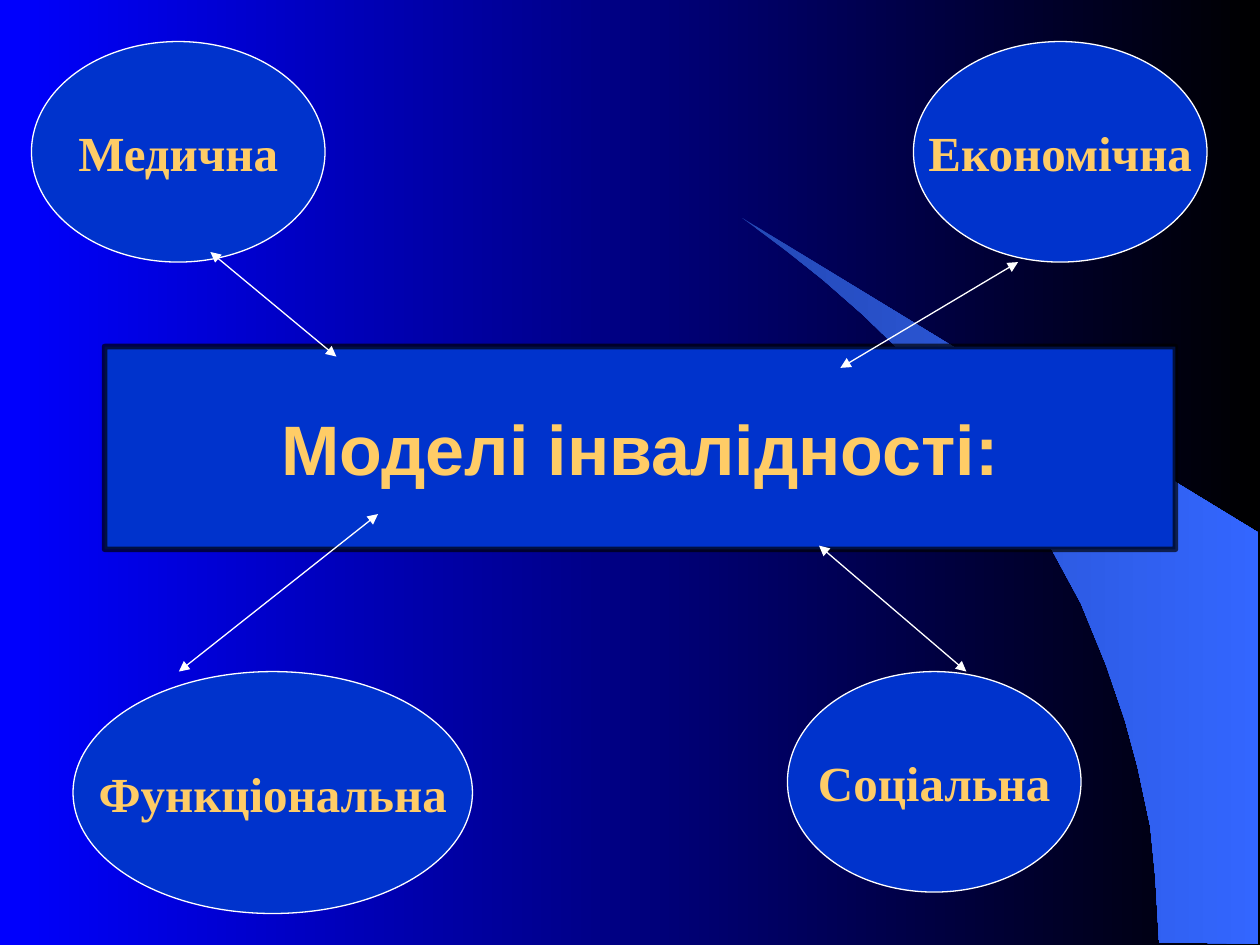
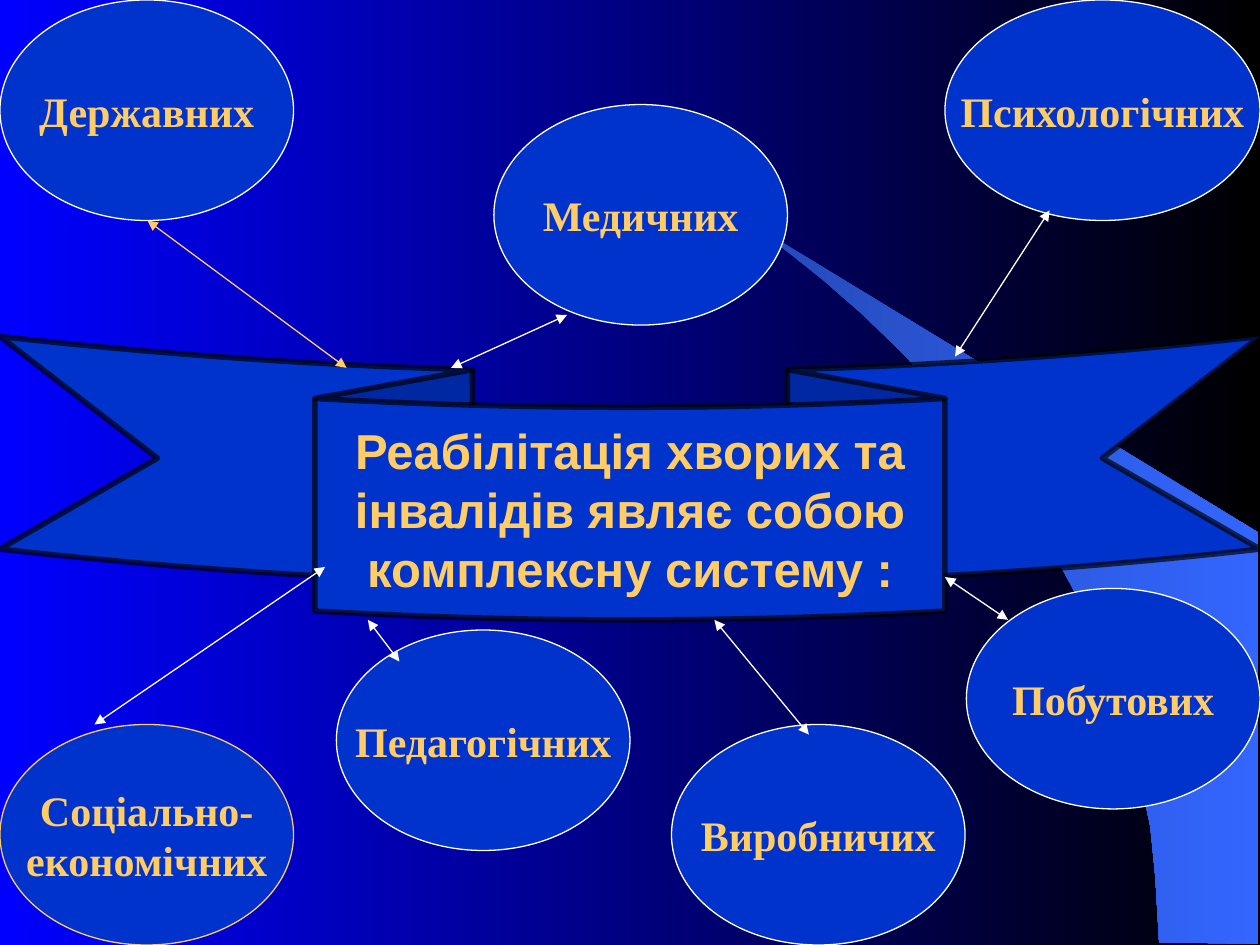
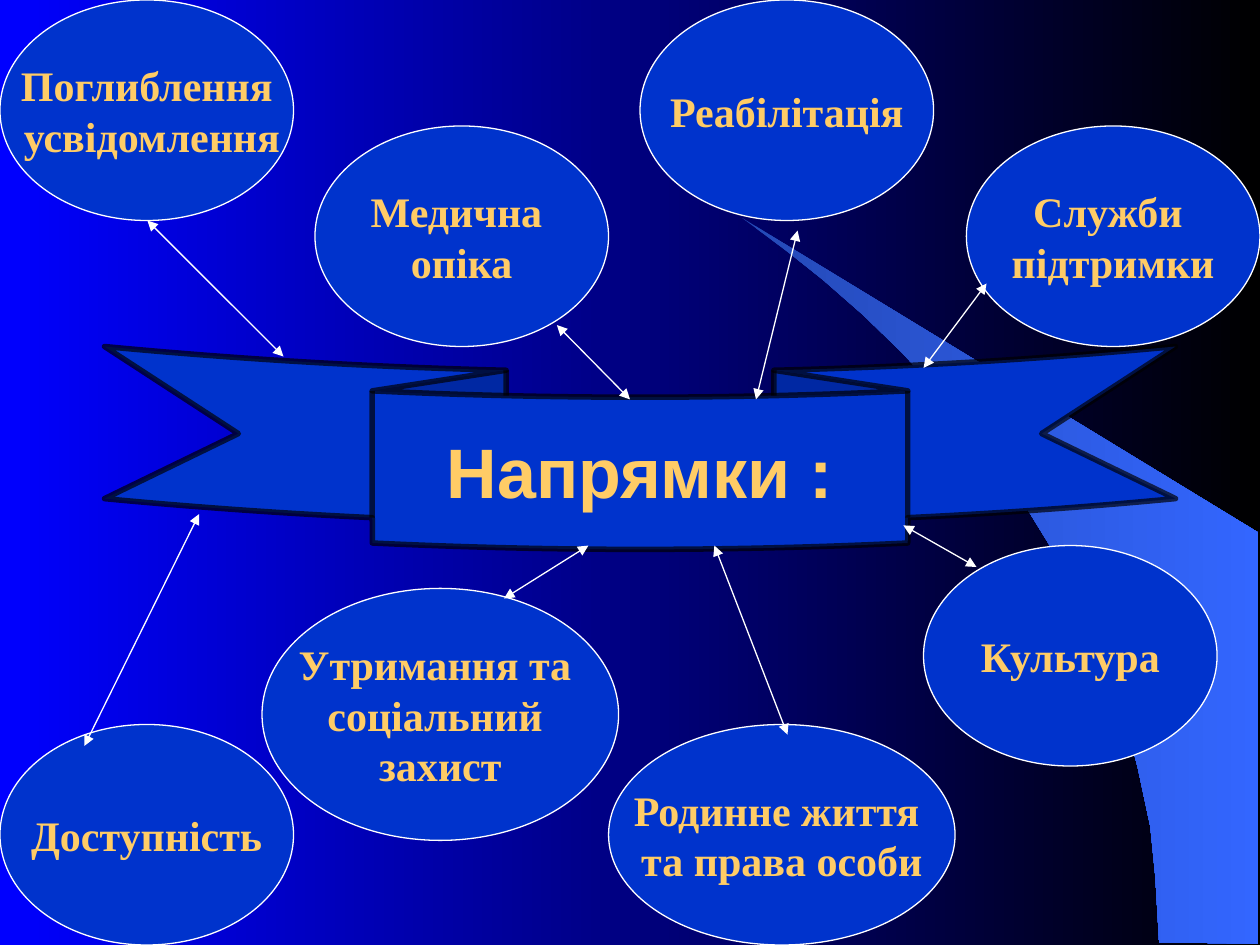
"""Build three slides on models of disability, rehabilitation and its directions."""
from dataclasses import dataclass

from lxml.etree import SubElement
from pptx import Presentation
from pptx.dml.color import RGBColor
from pptx.dml.fill import FillFormat
from pptx.enum.shapes import MSO_CONNECTOR, MSO_SHAPE
from pptx.enum.text import MSO_ANCHOR, PP_ALIGN
from pptx.oxml.ns import qn
from pptx.shapes.autoshape import Shape
from pptx.slide import Slide
from pptx.util import Inches, Pt

COLORS = {
    "background_start": "0000FF",
    "background_end": "000000",
    "swoosh_start": "2449B6",
    "swoosh_end": "3366FF",
    "fill": "0033CC",
    "white": "FFFFFF",
    "gold": "FFCC66",
    "black": "000000",
}
TITLE_FONT = "Arial"
LABEL_FONT = "Times New Roman"
SWOOSH_POINTS = [
    (9.2, 7.48), (9.99, 7.49), (9.99, 4.23), (5.89, 1.73), (6.24, 1.99), (6.53, 2.22),
    (6.85, 2.5), (7.16, 2.8), (7.62, 3.3), (8.03, 3.84), (8.32, 4.31), (8.58, 4.79),
    (8.78, 5.28), (8.93, 5.72), (9.03, 6.09), (9.13, 6.56), (9.17, 6.96),
]


@dataclass(frozen=True)
class Banner:
    """Central title shape."""
    text: str
    size: int
    left: float = 0.83
    top: float = 2.75
    width: float = 8.5
    height: float = 1.61
    kind: MSO_SHAPE = MSO_SHAPE.CURVED_DOWN_RIBBON


@dataclass(frozen=True)
class Bubble:
    """Labelled ellipse."""
    text: str
    left: float
    top: float
    width: float = 2.33
    height: float = 1.75
    outline: str = "white"


@dataclass(frozen=True)
class Arrow:
    """Double-headed arrow between two points."""
    start: tuple[float, float]
    end: tuple[float, float]
    color: str = "white"


@dataclass(frozen=True)
class Diagram:
    """Content of one slide."""
    banner: Banner
    label_size: int
    bubbles: list[Bubble]
    arrows: list[Arrow]


DIAGRAMS = [
    Diagram(
        Banner("Моделі інвалідності:", 40, kind=MSO_SHAPE.RECTANGLE),
        28,
        [
            Bubble("Медична", 0.25, 0.33),
            Bubble("Функціональна", 0.58, 5.33, 3.17, 1.92),
            Bubble("Економічна", 7.25, 0.33),
            Bubble("Соціальна", 6.25, 5.33),
        ],
        [
            Arrow((1.67, 2), (2.67, 2.83)),
            Arrow((6.67, 2.92), (8.08, 2.08)),
            Arrow((1.42, 5.33), (3, 4.08)),
            Arrow((6.5, 4.33), (7.67, 5.33)),
        ],
    ),
    Diagram(
        Banner("Реабілітація хворих та інвалідів являє собою комплексну систему :",
               28, 0, 2.67, 10, 2.25),
        24,
        [
            Bubble("Державних", 0, 0),
            Bubble("Медичних", 3.92, 0.83),
            Bubble("Психологічних", 7.5, 0, 2.5),
            Bubble("Побутових", 7.67, 4.67),
            Bubble("Виробничих", 5.33, 5.75),
            Bubble("Педагогічних", 2.67, 5),
            Bubble("Соціально-\nекономічних", 0, 5.75, outline="gold"),
        ],
        [
            Arrow((1.17, 1.75), (2.75, 2.92), "gold"),
            Arrow((3.58, 2.92), (4.5, 2.5)),
            Arrow((7.58, 2.83), (8.33, 1.67)),
            Arrow((0.75, 5.75), (2.58, 4.5)),
            Arrow((2.92, 4.92), (3.17, 5.25)),
            Arrow((5.67, 4.92), (6.42, 5.83)),
            Arrow((7.5, 4.58), (8, 4.92)),
        ],
    ),
    Diagram(
        Banner("Напрямки :", 40),
        24,
        [
            Bubble("Поглиблення\n усвідомлення", 0, 0),
            Bubble("Реабілітація", 5.08, 0),
            Bubble("Служби \nпідтримки", 7.67, 1),
            Bubble("Родинне життя \nта права особи", 4.83, 5.75, 2.75),
            Bubble("Утримання та \nсоціальний \nзахист", 2.08, 4.67, 2.83, 2),
            Bubble("Доступність", 0, 5.75),
            Bubble("Медична \nопіка", 2.5, 1),
            Bubble("Культура", 7.33, 4.33),
        ],
        [
            Arrow((1.17, 1.75), (2.25, 2.83)),
            Arrow((6.33, 1.83), (6, 3.17)),
            Arrow((4.42, 2.58), (5, 3.17)),
            Arrow((7.83, 2.25), (7.33, 2.92)),
            Arrow((1.58, 4.08), (0.67, 5.92)),
            Arrow((4.67, 4.33), (4, 4.75)),
            Arrow((5.67, 4.33), (6.25, 5.83)),
            Arrow((7.17, 4.17), (7.75, 4.5)),
        ],
    ),
]


def rgb(name: str) -> RGBColor:
    """Look up a named colour."""
    return RGBColor.from_string(COLORS[name])


def set_gradient(fill: FillFormat, start: str, end: str) -> None:
    """Apply a left-to-right gradient."""
    fill.gradient()
    fill.gradient_angle = 0
    for stop, name in zip(fill.gradient_stops, (start, end)):
        stop.color.rgb = rgb(name)


def add_swoosh(slide: Slide) -> None:
    """Draw the curved decoration shared by all slides."""
    points = [(Inches(x), Inches(y)) for x, y in SWOOSH_POINTS]
    builder = slide.shapes.build_freeform(*points[0])
    builder.add_line_segments(points[1:], close=True)
    shape = builder.convert_to_shape()
    shape.shadow.inherit = False
    shape.line.fill.background()
    set_gradient(shape.fill, "swoosh_start", "swoosh_end")


def add_label_shape(slide: Slide, item: Banner | Bubble, kind: MSO_SHAPE, font_name: str,
                    size: int, outline: str, line_width: float, wrap: bool) -> Shape:
    """Draw a filled shape with centred bold text."""
    box = [Inches(value) for value in (item.left, item.top, item.width, item.height)]
    shape = slide.shapes.add_shape(kind, *box)
    shape.shadow.inherit = False
    shape.fill.solid()
    shape.fill.fore_color.rgb = rgb("fill")
    shape.line.color.rgb = rgb(outline)
    shape.line.width = Pt(line_width)
    frame = shape.text_frame
    frame.text = item.text
    frame.word_wrap = wrap
    frame.vertical_anchor = MSO_ANCHOR.MIDDLE
    font_format = {"name": font_name, "size": Pt(size), "bold": True}
    for paragraph in frame.paragraphs:
        paragraph.alignment = PP_ALIGN.CENTER
        for run in paragraph.runs:
            for attribute, value in font_format.items():
                setattr(run.font, attribute, value)
            run.font.color.rgb = rgb("gold")
    return shape


def add_banner(slide: Slide, banner: Banner) -> None:
    """Draw the central title with a translucent round-joined outline."""
    shape = add_label_shape(slide, banner, banner.kind, TITLE_FONT, banner.size,
                            "black", 3.15, True)
    line = shape.line._get_or_add_ln()
    SubElement(line.find(".//" + qn("a:srgbClr")), qn("a:alpha"), val="67000")
    SubElement(line, qn("a:round"))


def add_bubble(slide: Slide, bubble: Bubble, size: int) -> None:
    """Draw one labelled ellipse."""
    add_label_shape(slide, bubble, MSO_SHAPE.OVAL, LABEL_FONT, size,
                    bubble.outline, 0.75, False)


def add_arrow(slide: Slide, arrow: Arrow) -> None:
    """Draw one double-headed arrow."""
    ends = [Inches(value) for value in (*arrow.start, *arrow.end)]
    connector = slide.shapes.add_connector(MSO_CONNECTOR.STRAIGHT, *ends)
    connector.line.color.rgb = rgb(arrow.color)
    connector.line.width = Pt(0.75)
    line = connector.line._get_or_add_ln()
    for tag in ("a:headEnd", "a:tailEnd"):
        SubElement(line, qn(tag), type="triangle")
    SubElement(connector._element.spPr, qn("a:effectLst"))


def main() -> None:
    """Build and save the presentation."""
    presentation = Presentation()
    presentation.slide_width = Inches(10)
    presentation.slide_height = Inches(7.5)
    set_gradient(presentation.slide_master.background.fill,
                 "background_start", "background_end")
    for diagram in DIAGRAMS:
        slide = presentation.slides.add_slide(presentation.slide_layouts[6])
        add_swoosh(slide)
        add_banner(slide, diagram.banner)
        for bubble in diagram.bubbles:
            add_bubble(slide, bubble, diagram.label_size)
        for arrow in diagram.arrows:
            add_arrow(slide, arrow)
    presentation.save("out.pptx")


if __name__ == "__main__":
    main()
